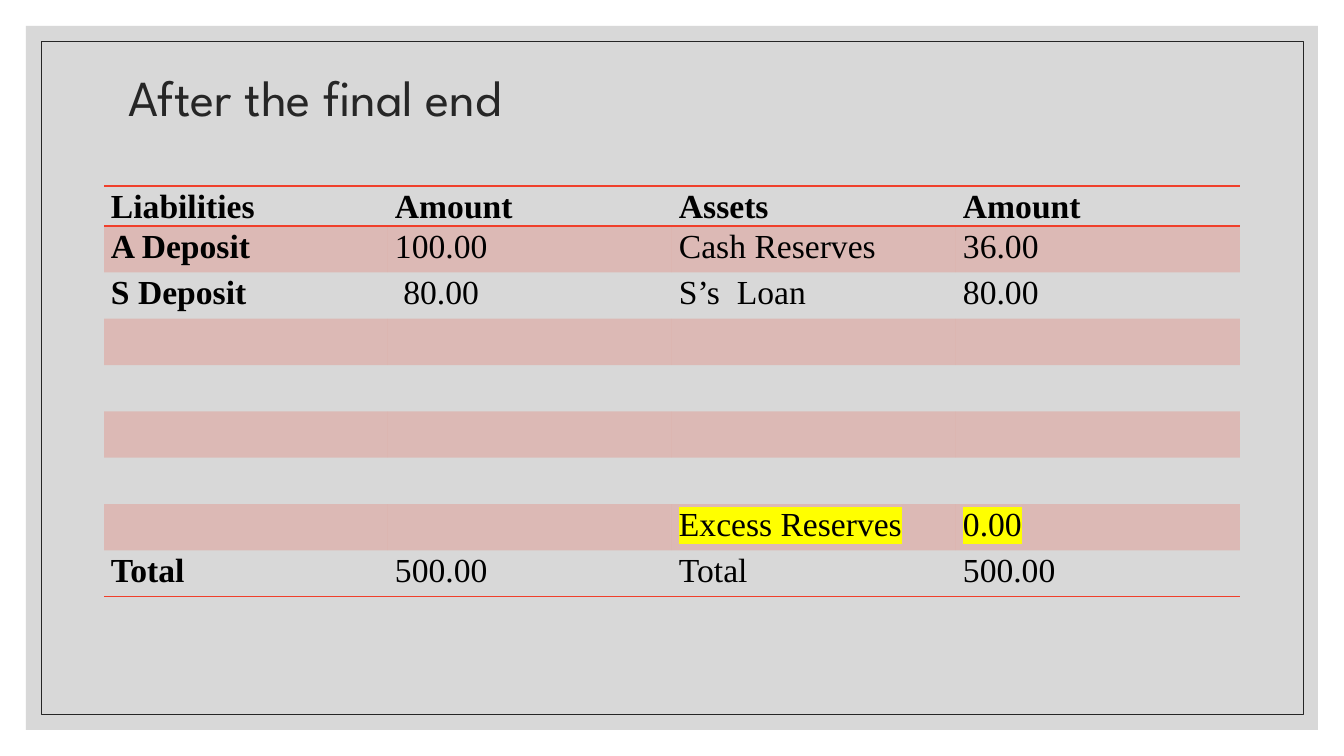
from lxml import etree
from pptx import Presentation, util as u
from pptx.dml.color import RGBColor
from pptx.enum import shapes, text
from pptx.oxml.ns import qn

TITLE = "After the final end"
ROWS = [
    ("Liabilities", "Amount", "Assets", "Amount"),
    ("A Deposit", "100.00", "Cash Reserves", "36.00"),
    ("S Deposit", " 80.00", "S’s  Loan", "80.00"),
    ("", "", "", ""),
    ("", "", "", ""),
    ("", "", "", ""),
    ("", "", "", ""),
    ("", "", "Excess Reserves", "0.00"),
    ("Total", "500.00", "Total", "500.00"),
]
MARKED = {"Excess Reserves", "0.00"}
RULES = {0, 1, len(ROWS)}  # row edges that carry a line
COLORS = {"panel": "BFBFBF", "dark": "262626", "text": "000000",
          "accent": "F03F2B", "mark": "FFFF00"}
FONTS = {"title": "League Spartan", "table": "Times New Roman"}

# Lengths in px: left, top, width, height
SLIDE = (1344, 756)
PANEL = (26, 26, 1292, 704)
FRAME = (41, 41, 1262, 673)
HEAD = (118, 71, 1109, 59)
TABLE = (104, 186, 1136, 411)
HEADER = 40
PAD = 7


def px(n):
    return u.Emu(round(n * 12192000 / SLIDE[0]))


def box(area):
    return [px(n) for n in area]


def rgb(name):
    return RGBColor.from_string(COLORS[name])


def fade(fill, percent):
    """Make a solid fill partly transparent."""
    color = fill._xPr.find(qn("a:solidFill"))[0]
    etree.SubElement(color, qn("a:alpha"), val=str(percent * 1000))


def paint(fill, name, percent):
    fill.solid()
    fill.fore_color.rgb = rgb(name)
    fade(fill, percent)


def rect(area):
    shape = slide.shapes.add_shape(shapes.MSO_SHAPE.RECTANGLE, *box(area))
    shape.shadow.inherit = False
    return shape


def write(para, words, font, size, color, bold=False):
    run = para.add_run()
    run.text = words
    run.font.size = u.Pt(size)
    run.font.bold = bold
    run.font.color.rgb = rgb(color)
    run.font.name = FONTS[font]
    return run


def mark(run):
    """Highlight a run."""
    light = etree.Element(qn("a:highlight"))
    etree.SubElement(light, qn("a:srgbClr"), val=COLORS["mark"])
    run.font._element.find(qn("a:solidFill")).addnext(light)


def edge(cell, side, ruled):
    props = cell._tc.get_or_add_tcPr()
    line = etree.SubElement(props, qn("a:ln" + side), w=str(u.Pt(1)))
    if ruled:
        fill = etree.SubElement(line, qn("a:solidFill"))
        etree.SubElement(fill, qn("a:srgbClr"), val=COLORS["accent"])
    else:
        etree.SubElement(line, qn("a:noFill"))


def style(cell, row):
    for side, ruled in (("L", False), ("R", False),
                        ("T", row in RULES), ("B", row + 1 in RULES)):
        edge(cell, side, ruled)
    if row % 2:
        paint(cell.fill, "accent", 20)
    else:
        cell.fill.background()
    cell.margin_left = cell.margin_right = px(PAD)
    cell.margin_top = cell.margin_bottom = 0


prs = Presentation()
prs.slide_width, prs.slide_height = box(SLIDE)
slide = prs.slides.add_slide(prs.slide_layouts[5])

panel = rect(PANEL)
paint(panel.fill, "panel", 60)
panel.line.fill.background()
frame = rect(FRAME)
frame.fill.background()
frame.line.color.rgb = rgb("dark")
frame.line.width = u.Pt(0.5)

title = slide.shapes.title
title.element.getparent().append(title.element)  # bring to front
title.left, title.top, title.width, title.height = box(HEAD)
body = title.text_frame
body.word_wrap = True
body.auto_size = text.MSO_AUTO_SIZE.NONE
body.vertical_anchor = text.MSO_ANCHOR.MIDDLE
para = body.paragraphs[0]
para.alignment = text.PP_ALIGN.LEFT
para.line_spacing = 0.9
write(para, TITLE, "title", 36, "dark")

table = slide.shapes.add_table(len(ROWS), len(ROWS[0]), *box(TABLE)).table
table.first_row = table.horz_banding = False
for col in table.columns:
    col.width = px(TABLE[2] / len(ROWS[0]))
for r, words in enumerate(ROWS):
    step = (TABLE[3] - HEADER) / (len(ROWS) - 1)
    table.rows[r].height = px(step if r else HEADER)
    for c, word in enumerate(words):
        cell = table.cell(r, c)
        style(cell, r)
        if not word:
            continue
        para = cell.text_frame.paragraphs[0]
        para.line_spacing = 1.07
        para.space_after = u.Pt(8)
        run = write(para, word, "table", 24, "text", r == 0 or c == 0)
        if word in MARKED:
            mark(run)

prs.save("out.pptx")
